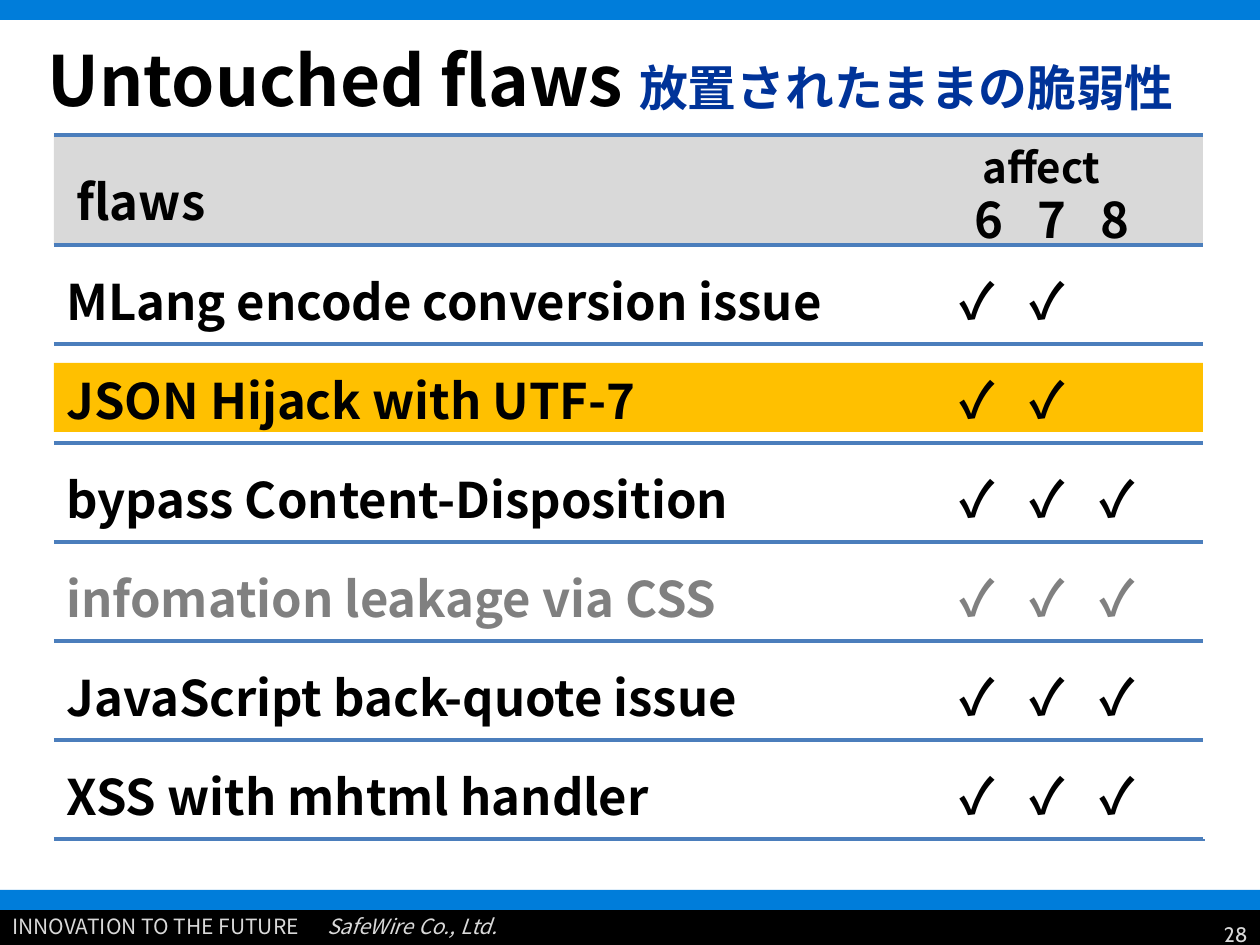
from pptx import Presentation
from pptx import util as u
from pptx.dml.color import RGBColor
from pptx.enum import shapes, text
from pptx.oxml.ns import qn
from lxml import etree

PX = 914400 // 126
BLUE = RGBColor(0x00, 0x7D, 0xDA)
RULE_BLUE = RGBColor(0x4B, 0x7E, 0xBC)
TITLE_BLUE = RGBColor(0x00, 0x33, 0x99)
BLACK = RGBColor(0x00, 0x00, 0x00)
WHITE = RGBColor(0xFF, 0xFF, 0xFF)
GREY = RGBColor(0x80, 0x80, 0x80)
PALE_GREY = RGBColor(0xD9, 0xD9, 0xD9)
AMBER = RGBColor(0xFF, 0xC0, 0x00)
FONT = "Noto Sans CJK JP"
NUMBER_FONT = "Cabin"

LEFT, CENTER, RIGHT = (text.PP_ALIGN.LEFT, text.PP_ALIGN.CENTER,
                       text.PP_ALIGN.RIGHT)
ROW_HEIGHT = 99
LABEL_HEIGHT = 72
TICK_LEFT, TICK_PITCH, TICK_WIDTH = 873, 70, 100

# label, colour, number of affected versions, highlighted
FLAWS = [
    ("MLang encode conversion issue", BLACK, 2, False),
    ("JSON Hijack with UTF-7", BLACK, 2, True),
    ("bypass Content-Disposition", BLACK, 3, False),
    ("infomation leakage via CSS", GREY, 3, False),
    ("JavaScript back-quote issue", BLACK, 3, False),
    ("XSS with mhtml handler", BLACK, 3, False),
]


def px(*lengths):
    return [u.Emu(length * PX) for length in lengths]


def add_span(para, words, size, color, bold=True, italic=False, font=FONT):
    span = para.add_run()
    span.text = words
    span.font.size = u.Pt(size)
    span.font.bold = bold
    span.font.italic = italic
    span.font.color.rgb = color
    span.font.name = font
    east_asian = etree.SubElement(span.font._element, qn("a:ea"))
    east_asian.set("typeface", font)


def add_para(page, box, align=LEFT, middle=False):
    frame = page.shapes.add_textbox(*px(*box)).text_frame
    frame.word_wrap = True
    if middle:
        frame.vertical_anchor = text.MSO_ANCHOR.MIDDLE
    else:
        frame.auto_size = text.MSO_AUTO_SIZE.SHAPE_TO_FIT_TEXT
    para = frame.paragraphs[0]
    para.alignment = align
    return para


def set_tabs(para, *stops, margin=0):
    properties = para._p.get_or_add_pPr()
    properties.set("marL", str(margin * PX))
    properties.set("indent", "0")
    tabs = etree.SubElement(properties, qn("a:tabLst"))
    for stop in stops:
        etree.SubElement(tabs, qn("a:tab"), pos=str(stop * PX), algn="l")


def add_block(page, box, color):
    block = page.shapes.add_shape(shapes.MSO_SHAPE.RECTANGLE, *px(*box))
    block.shadow.inherit = False
    block.fill.solid()
    block.fill.fore_color.rgb = color
    block.line.fill.background()


def add_rule(page, x1, y1, x2, y2, color=RULE_BLUE):
    rule = page.shapes.add_connector(
        shapes.MSO_CONNECTOR.STRAIGHT, *px(x1, y1, x2, y2))
    rule.line.color.rgb = color
    rule.line.width = u.Pt(2.25)
    etree.SubElement(rule._element.spPr, qn("a:effectLst"))


def add_title(page, box):
    title = page.shapes.title
    title.left, title.top, title.width, title.height = px(*box)
    frame = title.text_frame
    frame.word_wrap = True
    frame.auto_size = text.MSO_AUTO_SIZE.NONE
    frame.vertical_anchor = text.MSO_ANCHOR.MIDDLE
    para = frame.paragraphs[0]
    para.alignment = LEFT
    add_span(para, "Untouched flaws ", 39.6, BLACK)
    add_span(para, "放置されたままの脆弱性", 27.9, TITLE_BLUE)


def add_footer(page, box):
    left, top, width, height = box
    add_block(page, (left, top + 10, width, height - 10), BLACK)
    add_block(page, (left, top, width, 20), BLUE)
    # Slogan and company
    para = add_para(page, (left, top + 17, 922, 38))
    set_tabs(para, 302)
    add_span(para, "INNOVATION TO THE FUTURE\t", 12, PALE_GREY, bold=False)
    add_span(para, "SafeWire Co., Ltd.", 12, PALE_GREY, bold=False, italic=True)
    # Page number
    para = add_para(page, (left + width - 294, top + 22, 294, 45), RIGHT, True)
    add_span(para, "28", 12, PALE_GREY, bold=False, font=NUMBER_FONT)


def add_header(page, box):
    left, top, width, height = box
    add_block(page, box, PALE_GREY)
    add_rule(page, left, top, left + width, top)
    add_rule(page, left, top + height, left + width, top + height)
    para = add_para(page, (left + 10, top + 30, 397, LABEL_HEIGHT))
    add_span(para, "flaws", 28, BLACK)
    para = add_para(page, (left + 834, top, 307, 63), CENTER)
    add_span(para, "affect", 24, BLACK)
    # Version numbers
    para = add_para(page, (left + 833, top + 48, 307, LABEL_HEIGHT))
    set_tabs(para, 127, 178, margin=75)
    add_span(para, "6\t7\t8", 28, BLACK)


def add_flaw(page, box, label, color, affected, highlighted):
    left, top, width, height = box
    if highlighted:
        add_block(page, (left, top + 19, width, 69), AMBER)
    para = add_para(page, (left, top + 20, 922, LABEL_HEIGHT))
    add_span(para, label, 28, color)
    for column in range(affected):
        tick_left = left + TICK_LEFT + column * TICK_PITCH
        para = add_para(
            page, (tick_left, top + 19, TICK_WIDTH, LABEL_HEIGHT), CENTER)
        add_span(para, "✓", 28, color)
    add_rule(page, left, top + height, left + width, top + height)


def add_flaw_list(page, box):
    left, top, width, header_height = box
    add_header(page, box)
    first_row = top + header_height
    for row, flaw in enumerate(FLAWS):
        row_top = first_row + row * ROW_HEIGHT
        add_flaw(page, (left, row_top, width, ROW_HEIGHT), *flaw)
    # White right edge
    right, bottom = left + width, first_row + len(FLAWS) * ROW_HEIGHT
    add_rule(page, right, top - 19, right, bottom, WHITE)


def main():
    deck = Presentation()
    deck.slide_width, deck.slide_height = px(1260, 945)
    page = deck.slides.add_slide(deck.slide_layouts[5])
    add_block(page, (0, 0, 1260, 20), BLUE)
    add_title(page, (35, 0, 1225, 157))
    add_flaw_list(page, (54, 135, 1151, 110))
    add_footer(page, (0, 890, 1260, 55))
    deck.save("out.pptx")


if __name__ == "__main__":
    main()
